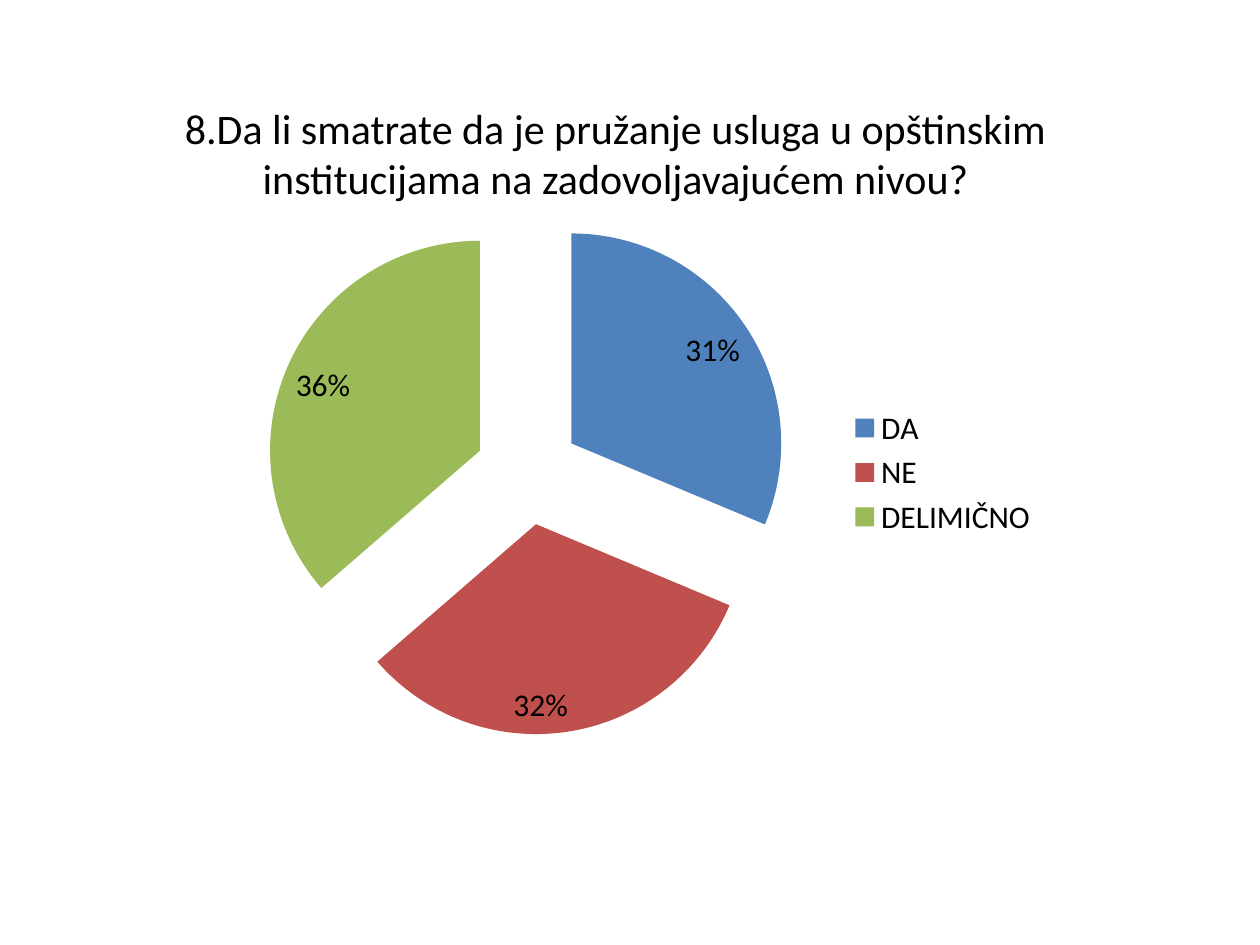
from dataclasses import dataclass

from pptx import Presentation
from pptx.chart.data import CategoryChartData
from pptx.dml.color import RGBColor
from pptx.enum.chart import XL_CHART_TYPE, XL_LABEL_POSITION, XL_LEGEND_POSITION
from pptx.enum.text import MSO_ANCHOR, MSO_AUTO_SIZE, PP_ALIGN
from pptx.oxml import parse_xml
from pptx.oxml.ns import nsdecls
from pptx.util import Inches, Pt

QUESTION = (
    "8.Da li smatrate da je pružanje usluga u opštinskim "
    "institucijama na zadovoljavajućem nivou?"
)
ANSWERS = [("DA", 31, "4F81BD"), ("NE", 32, "C0504D"), ("DELIMIČNO", 36, "9BBB59")]
SLICE_GAP = 25  # percent of the radius

# left, top, width, height in inches
QUESTION_BOX = (0.83, 0.76, 8.11, 0.91)
CHART_BOX = (1.67, 1.53, 6.67, 4.44)


@dataclass(frozen=True)
class Theme:
    font: str = "Calibri"
    ink: str = "000000"
    question_size: int = 24
    chart_size: int = 18


THEME = Theme()


def style_font(font, size):
    font.name = THEME.font
    font.size = Pt(size)
    font.color.rgb = RGBColor.from_string(THEME.ink)


def write_text(shape, text, *, size, align=PP_ALIGN.CENTER, anchor=MSO_ANCHOR.TOP):
    frame = shape.text_frame
    frame.word_wrap = True
    frame.auto_size = MSO_AUTO_SIZE.NONE
    frame.vertical_anchor = anchor
    paragraph = frame.paragraphs[0]
    paragraph.alignment = align
    run = paragraph.add_run()
    run.text = text
    style_font(run.font, size)


def add_question(slide):
    title = slide.shapes.title
    title.left, title.top, title.width, title.height = map(Inches, QUESTION_BOX)
    write_text(title, QUESTION, size=THEME.question_size)


def explode(series, percent):
    """Move every slice of the pie away from the centre."""
    explosion = parse_xml(f'<c:explosion {nsdecls("c")} val="{percent}"/>')
    series._element.find("{*}dPt").addprevious(explosion)


def add_answers_pie(slide):
    names, shares, colors = zip(*ANSWERS)
    answers = CategoryChartData()
    answers.categories = names
    answers.add_series("Series 1", shares)
    chart = slide.shapes.add_chart(
        XL_CHART_TYPE.PIE, *map(Inches, CHART_BOX), answers
    ).chart
    chart.has_title = False
    style_font(chart.font, THEME.chart_size)

    chart.has_legend = True
    chart.legend.position = XL_LEGEND_POSITION.RIGHT
    chart.legend.include_in_layout = False

    pie = chart.plots[0]
    pie.vary_by_categories = True
    series = pie.series[0]
    for index, color in enumerate(colors):
        fill = series.points[index].format.fill
        fill.solid()
        fill.fore_color.rgb = RGBColor.from_string(color)
    explode(series, SLICE_GAP)

    labels = series.data_labels
    labels.show_percentage = True
    labels.show_value = False
    labels.number_format = "0%"
    labels.number_format_is_linked = False
    labels.position = XL_LABEL_POSITION.INSIDE_END


def main():
    deck = Presentation()
    deck.slide_width, deck.slide_height = Inches(10), Inches(7.5)
    slide = deck.slides.add_slide(deck.slide_layouts.get_by_name("Title Only"))
    add_question(slide)
    add_answers_pie(slide)
    deck.save("out.pptx")


if __name__ == "__main__":
    main()
